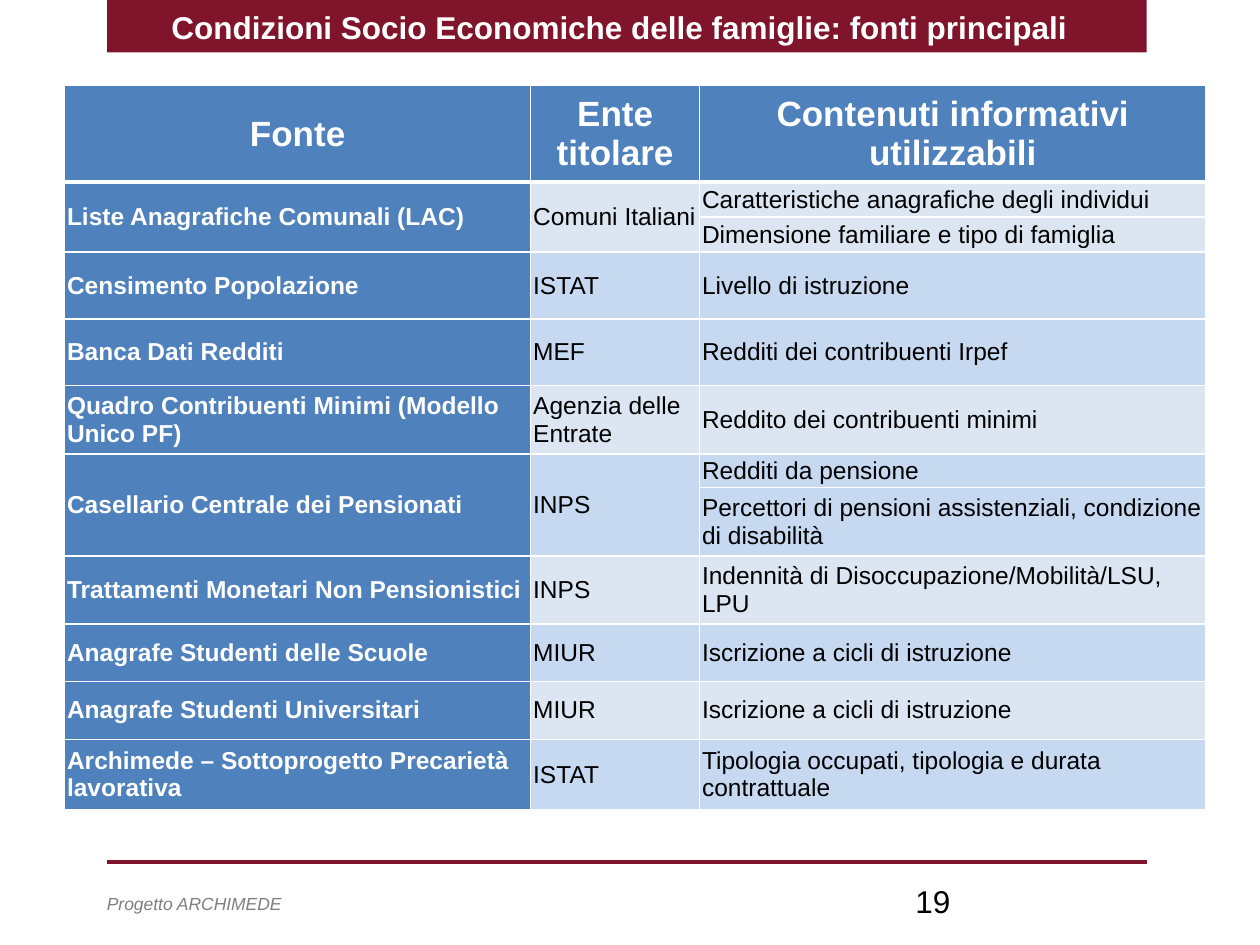
"""Build the slide listing the main sources on household socio-economic conditions."""
from dataclasses import dataclass
from typing import Any

import lxml.etree
import pptx
import pptx.dml.color
import pptx.enum.shapes
import pptx.enum.text
import pptx.oxml.ns
import pptx.util

Pt = pptx.util.Pt
RGBColor = pptx.dml.color.RGBColor
Align = pptx.enum.text.PP_ALIGN
Anchor = pptx.enum.text.MSO_ANCHOR
qn = pptx.oxml.ns.qn

MAROON = RGBColor(0x7F, 0x14, 0x2A)
BLUE = RGBColor(0x4F, 0x81, 0xBD)
LIGHT = RGBColor(0xDC, 0xE6, 0xF2)
MEDIUM = RGBColor(0xC6, 0xD9, 0xF1)
WHITE = RGBColor(0xFF, 0xFF, 0xFF)
BLACK = RGBColor(0x00, 0x00, 0x00)
GRAY = RGBColor(0x7F, 0x7F, 0x7F)

COLUMN_WIDTHS = (266.4, 96.5, 289.4)
HEADER_HEIGHT = 55.2
HEADERS = ("Fonte", "Ente titolare", "Contenuti informativi utilizzabili")


@dataclass(frozen=True)
class TextStyle:
    size: float
    color: RGBColor
    bold: bool = False
    italic: bool = False
    alignment: Any = Align.LEFT


@dataclass(frozen=True)
class Source:
    name: str
    owner: str
    contents: tuple[str, ...]
    heights: tuple[float, ...]
    fill: RGBColor


TITLE_STYLE = TextStyle(18, WHITE, bold=True, alignment=Align.CENTER)
HEADER_STYLE = TextStyle(20, WHITE, bold=True, alignment=Align.CENTER)
NAME_STYLE = TextStyle(14, WHITE, bold=True)
BODY_STYLE = TextStyle(14, BLACK)
NUMBER_STYLE = TextStyle(18, BLACK)
FOOTER_STYLE = TextStyle(10, GRAY, italic=True)

SOURCES = (
    Source("Liste Anagrafiche Comunali (LAC)", "Comuni Italiani",
           ("Caratteristiche anagrafiche degli individui",
            "Dimensione familiare e tipo di famiglia"), (20, 20), LIGHT),
    Source("Censimento Popolazione", "ISTAT", ("Livello di istruzione",), (38.2,), MEDIUM),
    Source("Banca Dati Redditi", "MEF", ("Redditi dei contribuenti Irpef",), (38.2,), MEDIUM),
    Source("Quadro Contribuenti Minimi (Modello Unico PF)", "Agenzia delle Entrate",
           ("Reddito dei contribuenti minimi",), (38.9,), LIGHT),
    Source("Casellario Centrale dei Pensionati", "INPS",
           ("Redditi da pensione",
            "Percettori di pensioni assistenziali, condizione di disabilità"),
           (19.4, 38.9), MEDIUM),
    Source("Trattamenti Monetari Non Pensionistici", "INPS",
           ("Indennità di Disoccupazione/Mobilità/LSU, LPU",), (38.9,), LIGHT),
    Source("Anagrafe Studenti delle Scuole", "MIUR",
           ("Iscrizione a cicli di istruzione",), (33,), MEDIUM),
    Source("Anagrafe Studenti Universitari", "MIUR",
           ("Iscrizione a cicli di istruzione",), (33,), LIGHT),
    Source("Archimede – Sottoprogetto Precarietà lavorativa", "ISTAT",
           ("Tipologia occupati, tipologia e durata contrattuale",), (40.3,), MEDIUM),
)


def set_attributes(target: Any, values: dict[str, Any]) -> None:
    for name, value in values.items():
        setattr(target, name, value)


def write_text(text_frame: Any, text: str, style: TextStyle) -> None:
    paragraph = text_frame.paragraphs[0]
    paragraph.alignment = style.alignment
    run = paragraph.add_run()
    run.text = text
    set_attributes(run.font, {"name": "Arial", "size": Pt(style.size),
                              "bold": style.bold, "italic": style.italic})
    run.font.color.rgb = style.color


def place(shape: Any, left: float, top: float, width: float, height: float) -> None:
    set_attributes(shape, {"left": Pt(left), "top": Pt(top),
                           "width": Pt(width), "height": Pt(height)})


def add_title(slide: Any, text: str) -> None:
    banner = slide.shapes.add_shape(pptx.enum.shapes.MSO_SHAPE.RECTANGLE,
                                    Pt(61.2), Pt(0), Pt(594), Pt(30))
    banner.shadow.inherit = False
    banner.fill.solid()
    banner.fill.fore_color.rgb = MAROON
    banner.line.fill.background()
    title = slide.shapes.title
    place(title, 56, 0, 596, 31)
    set_attributes(title.text_frame, {"auto_size": pptx.enum.text.MSO_AUTO_SIZE.NONE,
                                      "word_wrap": True, "vertical_anchor": Anchor.MIDDLE})
    write_text(title.text_frame, text, TITLE_STYLE)
    banner.element.addnext(title.element)


def add_footer_line(slide: Any) -> None:
    line = slide.shapes.add_connector(pptx.enum.shapes.MSO_CONNECTOR.STRAIGHT,
                                      Pt(61.2), Pt(492.5), Pt(655.2), Pt(492.5))
    line.line.color.rgb = MAROON
    line.line.width = Pt(2)
    lxml.etree.SubElement(line.element.spPr, qn("a:effectLst"))


def add_text(slide: Any, text: str, style: TextStyle, left: float, top: float,
             width: float, height: float) -> None:
    box = slide.shapes.add_textbox(Pt(left), Pt(top), Pt(width), Pt(height))
    box.text_frame.word_wrap = True
    write_text(box.text_frame, text, style)


def format_cell(cell: Any, fill: RGBColor, top: float = 1, bottom: float = 1) -> None:
    set_attributes(cell, {"margin_left": Pt(1.4), "margin_right": Pt(1.4), "margin_top": Pt(0),
                          "margin_bottom": Pt(0), "vertical_anchor": Anchor.MIDDLE})
    properties = cell._tc.get_or_add_tcPr()
    for side, width in (("L", 1), ("R", 1), ("T", top), ("B", bottom)):
        border = lxml.etree.SubElement(properties, qn(f"a:ln{side}"), w=str(int(Pt(width))))
        solid = lxml.etree.SubElement(border, qn("a:solidFill"))
        lxml.etree.SubElement(solid, qn("a:srgbClr"), val=str(WHITE))
    cell.fill.solid()
    cell.fill.fore_color.rgb = fill


def add_source_table(slide: Any) -> None:
    heights = [HEADER_HEIGHT, *(height for source in SOURCES for height in source.heights)]
    table = slide.shapes.add_table(len(heights), len(COLUMN_WIDTHS), Pt(36.9), Pt(48.9),
                                   Pt(sum(COLUMN_WIDTHS)), Pt(sum(heights))).table
    for column, width in zip(table.columns, COLUMN_WIDTHS):
        column.width = Pt(width)
    for row, height in zip(table.rows, heights):
        row.height = Pt(height)
    for column_index, header in enumerate(HEADERS):
        cell = table.cell(0, column_index)
        format_cell(cell, BLUE, bottom=3)
        write_text(cell.text_frame, header, HEADER_STYLE)
    first_row = 1
    for source in SOURCES:
        last_row = first_row + len(source.contents) - 1
        for row_index, content in enumerate(source.contents, first_row):
            for column_index, fill in enumerate((BLUE, source.fill, source.fill)):
                format_cell(table.cell(row_index, column_index), fill,
                            top=3 if row_index == 1 else 1)
            write_text(table.cell(row_index, 2).text_frame, content, BODY_STYLE)
        for column_index, (text, style) in enumerate(((source.name, NAME_STYLE),
                                                      (source.owner, BODY_STYLE))):
            cell = table.cell(first_row, column_index)
            write_text(cell.text_frame, text, style)
            if last_row > first_row:
                cell.merge(table.cell(last_row, column_index))
        first_row = last_row + 1


def main() -> None:
    presentation = pptx.Presentation()
    set_attributes(presentation, {"slide_width": Pt(720), "slide_height": Pt(540)})
    slide = presentation.slides.add_slide(presentation.slide_layouts.get_by_name("Title Only"))
    add_title(slide, "Condizioni Socio Economiche delle famiglie: fonti principali")
    add_footer_line(slide)
    add_source_table(slide)
    add_text(slide, "19", NUMBER_STYLE, 516, 500.5, 168, 29)
    add_text(slide, "Progetto ARCHIMEDE", FOOTER_STYLE, 54, 507, 443.5, 19.4)
    presentation.save("out.pptx")


if __name__ == "__main__":
    main()
